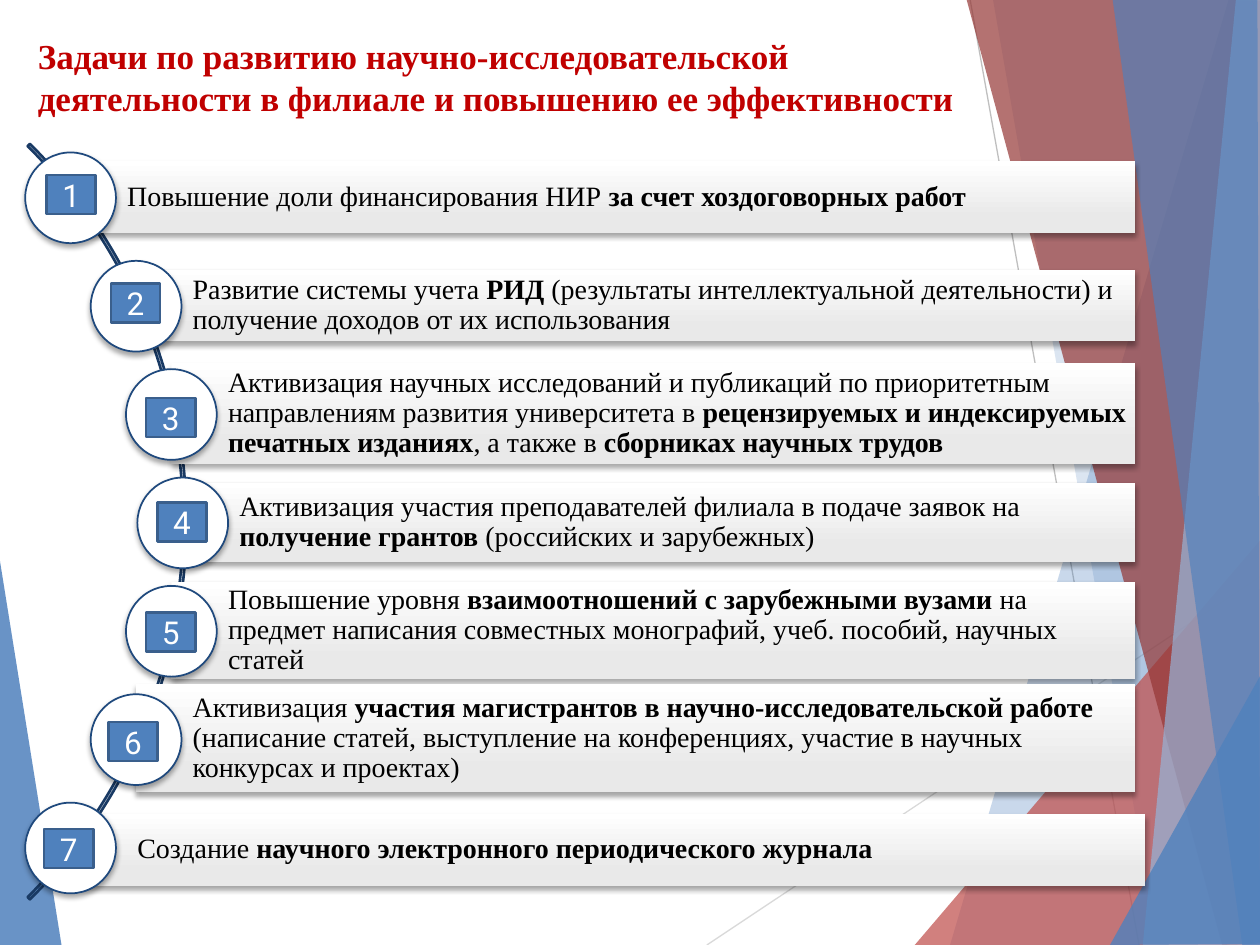
from lxml.etree import SubElement
from pptx import Presentation
from pptx.dml.color import RGBColor
from pptx.enum.shapes import MSO_CONNECTOR, MSO_SHAPE as Shape
from pptx.enum.text import MSO_ANCHOR as Anchor, PP_ALIGN as Align
from pptx.oxml.ns import qn
from pptx.util import Pt

EMU_PER_PX = 9144  # 100 px to the inch
BLUE = "4F81BD"
ARC_BLUE = "193A64"

TITLE = ("Задачи по развитию научно-исследовательской деятельности "
         "в филиале и повышению ее эффективности")

# Facets: colour, opacity in percent, corner points
LEFT_FACET = (BLUE, 85, [(-1, 439), (49, 751), (-1, 750)])
RIGHT_FACETS = [
    (BLUE, 30, [(975, 0), (754, 750), (1002, 751), (1001, 1)]),
    (BLUE, 20, [(788, -1), (919, 750), (1001, 750), (1001, -1)]),
    ("C0504D", 72, [(726, 750), (1000, 429), (1001, 750)]),
    ("953735", 70, [(767, -1), (970, 750), (1001, 749), (1001, -1)]),
    ("95B3D7", 70, [(981, -1), (907, 750), (1001, 750), (1000, -1)]),
    (BLUE, 65, [(883, -1), (986, 750), (1000, 750), (998, -1)]),
    (BLUE, 80, [(881, 750), (1001, 535), (1001, 749)]),
]
THIN_LINES = [("D9D9D9", 561, 750, 1001, 457), ("BFBFBF", 770, 0, 904, 750)]

CIRCLE_SIZE = 72
CIRCLE_TOP, CIRCLE_STEP = 121, 86
BADGE_WIDTH, BADGE_HEIGHT = 39, 31

# Tasks: bar box, circle left, badge left and top, text with **bold** parts
TASKS = [
    ((56, 128, 845, 57), 20, (37, 139),
     "Повышение доли финансирования НИР **за счет хоздоговорных работ**"),
    ((108, 214, 793, 57), 72, (88, 225),
     "Развитие системы учета **РИД** (результаты интеллектуальной "
     "деятельности) и получение доходов от их использования"),
    ((136, 288, 765, 80), 100, (116, 316),
     "Активизация научных исследований и публикаций по приоритетным "
     "направлениям развития университета в **рецензируемых и индексируемых "
     "печатных изданиях**, а также в **сборниках научных трудов**"),
    ((145, 383, 756, 63), 109, (125, 399),
     "Активизация участия преподавателей филиала в подаче заявок на "
     "**получение грантов **(российских и зарубежных)"),
    ((136, 462, 765, 77), 100, (116, 486),
     "Повышение уровня **взаимоотношений с зарубежными вузами **на предмет "
     "написания совместных монографий, учеб. пособий, научных статей"),
    ((108, 543, 793, 86), 72, (86, 573),
     "Активизация **участия магистрантов в научно-исследовательской работе **"
     "(написание статей, выступление на конференциях, участие в научных "
     "конкурсах и проектах)"),
    ((64, 646, 845, 57), 20, (35, 658),
     "Создание **научного электронного периодического журнала**"),
]


def px(*lengths):
    return [length * EMU_PER_PX for length in lengths]


def rgb(color):
    return RGBColor.from_string(color)


def set_all(target, values):
    for name, value in values.items():
        setattr(target, name, value)


class SlidePainter:
    """Holds the slide and the style shared by its elements."""

    title_font = {"name": "Times New Roman", "size": Pt(20), "bold": True}
    task_font = {"name": "Times New Roman", "size": Pt(16)}
    badge_font = {"name": "Roboto", "size": Pt(18)}
    title_frame = {"word_wrap": True, "vertical_anchor": Anchor.TOP}
    task_frame = dict(zip(
        ("margin_left", "margin_top", "margin_right", "margin_bottom"),
        px(45, 4, 4, 4)), word_wrap=True, vertical_anchor=Anchor.MIDDLE)

    def __init__(self, slide):
        self.slide = slide
        self.shapes = slide.shapes

    def add_text(self, paragraph, text, font, color):
        """Add text in runs; the parts between ** marks are bold."""
        for index, part in enumerate(text.split("**")):
            if part:
                run = paragraph.add_run()
                run.text = part
                set_all(run.font, {"bold": index % 2 == 1, **font})
                run.font.color.rgb = rgb(color)

    def title(self, text, box):
        title = self.shapes.title
        set_all(title, dict(zip(("left", "top", "width", "height"), px(*box))))
        set_all(title.text_frame, self.title_frame)
        paragraph = title.text_frame.paragraphs[0]
        paragraph.alignment = Align.LEFT
        self.add_text(paragraph, text, self.title_font, "C00000")

    def facet(self, color, opacity, points):
        builder = self.shapes.build_freeform(*points[0], scale=EMU_PER_PX)
        builder.add_line_segments(points[1:], close=True)
        shape = builder.convert_to_shape()
        shape.shadow.inherit = False
        shape.line.fill.background()
        shape.fill.solid()
        shape.fill.fore_color.rgb = rgb(color)
        fill_color = shape._element.spPr.find(".//" + qn("a:srgbClr"))
        SubElement(fill_color, qn("a:alpha"), val=str(opacity * 1000))

    def thin_line(self, color, *ends):
        line = self.shapes.add_connector(MSO_CONNECTOR.STRAIGHT, *px(*ends))
        line.line.color.rgb = rgb(color)
        line.line.width = Pt(0.75)
        SubElement(line._element.spPr, qn("a:effectLst"))

    def shape(self, kind, box, fill=None, line=None, width=1.5):
        shape = self.shapes.add_shape(kind, *px(*box))
        shape.shadow.inherit = False
        if fill:
            shape.fill.solid()
            shape.fill.fore_color.rgb = rgb(fill)
        else:
            shape.fill.background()
        if line:
            shape.line.color.rgb = rgb(line)
            shape.line.width = Pt(width)
        else:
            shape.line.fill.background()
        return shape

    def drop_shadow(self, shape):
        effects = shape._element.spPr.find(qn("a:effectLst"))
        shadow = SubElement(effects, qn("a:outerShdw"), blurRad=str(Pt(3)),
                            dist=str(Pt(2)), dir="5400000", rotWithShape="0")
        color = SubElement(shadow, qn("a:srgbClr"), val="000000")
        SubElement(color, qn("a:alpha"), val="35000")

    def arc(self, box):
        arc = self.shape(Shape.BLOCK_ARC, box, line=ARC_BLUE)
        for index, value in enumerate((189, 27, 0.003)):
            arc.adjustments[index] = value

    def bar(self, box, text):
        bar = self.shape(Shape.RECTANGLE, box)
        bar.fill.gradient()
        bar.fill.gradient_angle = 270
        stops = ((0, "FFFFFF"), (0.78, "E9E9E9"))
        for stop, (position, color) in zip(bar.fill.gradient_stops, stops):
            stop.position = position
            stop.color.rgb = rgb(color)
        self.drop_shadow(bar)
        set_all(bar.text_frame, self.task_frame)
        paragraph = bar.text_frame.paragraphs[0]
        set_all(paragraph, {"alignment": Align.LEFT, "line_spacing": 0.9})
        self.add_text(paragraph, text, self.task_font, "000000")

    def circle(self, left, top):
        box = (left, top, CIRCLE_SIZE, CIRCLE_SIZE)
        self.drop_shadow(self.shape(Shape.OVAL, box, "FFFFFF", "1F497D", 1))

    def badge(self, number, left, top):
        box = (left, top, BADGE_WIDTH, BADGE_HEIGHT)
        badge = self.shape(Shape.RECTANGLE, box, BLUE, "3A5F8C")
        badge.text_frame.vertical_anchor = Anchor.MIDDLE
        paragraph = badge.text_frame.paragraphs[0]
        paragraph.alignment = Align.CENTER
        self.add_text(paragraph, str(number), self.badge_font, "FFFFFF")


def main():
    presentation = Presentation()
    presentation.slide_width, presentation.slide_height = px(1000, 750)
    title_only = presentation.slide_layouts[5]
    painter = SlidePainter(presentation.slides.add_slide(title_only))

    painter.facet(*LEFT_FACET)
    for line in THIN_LINES:
        painter.thin_line(*line)
    for facet in RIGHT_FACETS:
        painter.facet(*facet)

    painter.title(TITLE, (20, 22, 768, 94))
    painter.arc((-700, -10, 848, 848))
    for index, (bar_box, circle_left, _, text) in enumerate(TASKS):
        painter.bar(bar_box, text)
        painter.circle(circle_left, CIRCLE_TOP + index * CIRCLE_STEP)
    for number, (_, _, badge_corner, _) in enumerate(TASKS, start=1):
        painter.badge(number, *badge_corner)

    presentation.save("out.pptx")


if __name__ == "__main__":
    main()
